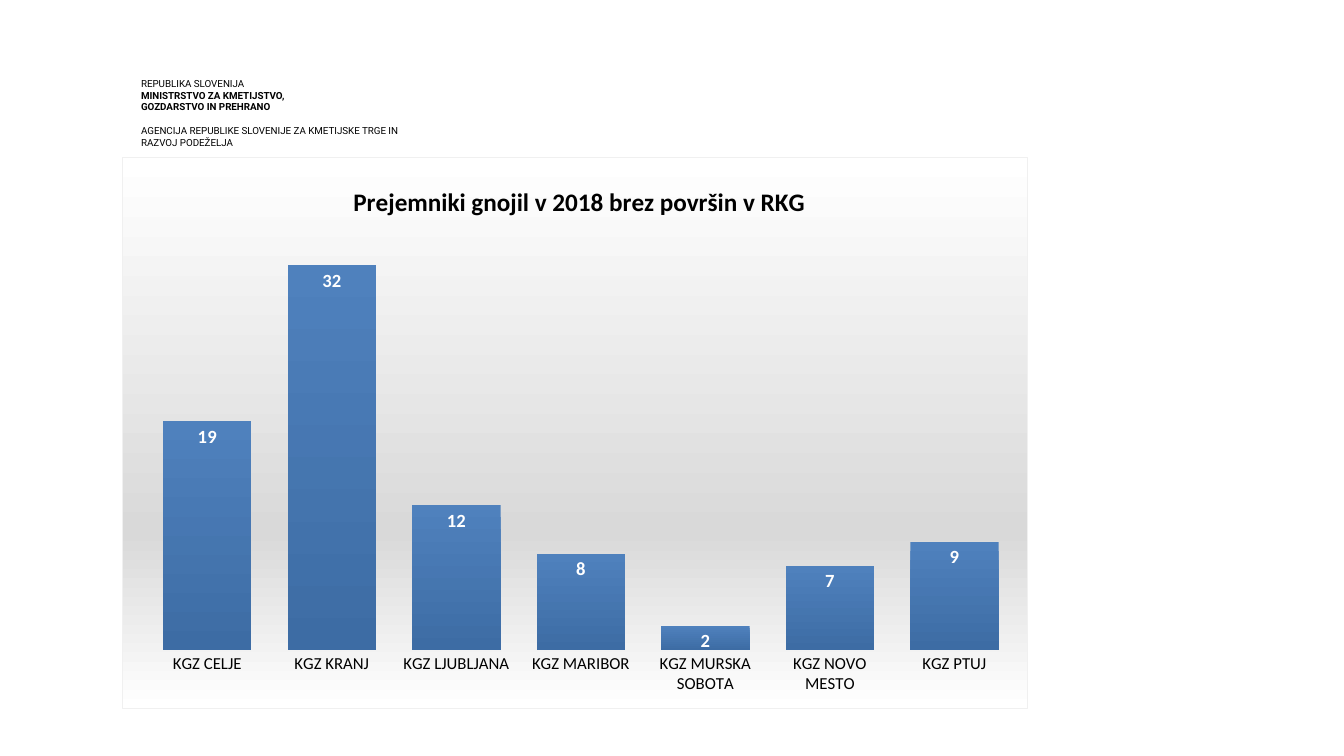
from dataclasses import dataclass

import pptx
import pptx.chart.data
import pptx.dml.color
import pptx.enum.chart
import pptx.oxml
import pptx.oxml.ns
import pptx.util

Pt = pptx.util.Pt
qn = pptx.oxml.ns.qn
NS = pptx.oxml.ns.nsdecls("c", "a")
COLORS = {
    "text": "000000",
    "muted": "999999",
    "white": "FFFFFF",
    "gray": "D9D9D9",
    "border": "F0F0F0",
    "bar_top": "4F81BD",
    "bar_bottom": "3D6CA4",
}


@dataclass
class HeaderLine:
    text: str
    bold: bool = False
    before: float = 0


@dataclass
class Stop:
    percent: int
    color: str


@dataclass
class Recipient:
    office: str
    count: int


HEADER = [
    HeaderLine("REPUBLIKA SLOVENIJA"),
    HeaderLine("MINISTRSTVO ZA KMETIJSTVO,", bold=True),
    HeaderLine("GOZDARSTVO IN PREHRANO", bold=True),
    HeaderLine(
        "AGENCIJA REPUBLIKE SLOVENIJE ZA KMETIJSKE TRGE IN RAZVOJ PODEŽELJA",
        before=8.4,
    ),
]
RECIPIENTS = [
    Recipient("KGZ CELJE", 19),
    Recipient("KGZ KRANJ", 32),
    Recipient("KGZ LJUBLJANA", 12),
    Recipient("KGZ MARIBOR", 8),
    Recipient("KGZ MURSKA SOBOTA", 2),
    Recipient("KGZ NOVO MESTO", 7),
    Recipient("KGZ PTUJ", 9),
]
BACKDROP = [Stop(0, "white"), Stop(68, "gray"), Stop(100, "white")]
BAR_FILL = [Stop(0, "bar_top"), Stop(100, "bar_bottom")]


def set_font(font, size: float, color: str = "text", bold: bool = False,
             name: str = "Calibri") -> None:
    font.size = Pt(size)
    font.bold = bold
    font.name = name
    font.color.rgb = pptx.dml.color.RGBColor.from_string(COLORS[color])


def add_text(p, text: str, **style) -> None:
    r = p.add_run()
    r.text = text
    set_font(r.font, **style)


def gradient(stops: list[Stop]):
    marks = "".join(
        f'<a:gs pos="{stop.percent * 1000}"><a:srgbClr val="{COLORS[stop.color]}"/></a:gs>'
        for stop in stops
    )
    return pptx.oxml.parse_xml(
        f'<a:gradFill {NS} rotWithShape="1"><a:gsLst>{marks}</a:gsLst>'
        '<a:lin ang="5400000" scaled="0"/></a:gradFill>'
    )


def set_layout(parent, index: int, target: str = "", **place: float) -> None:
    for old in parent.findall(qn("c:layout")):
        parent.remove(old)
    inner = f'<c:layoutTarget val="{target}"/>' if target else ""
    modes = "".join(f'<c:{key}Mode val="edge"/>' for key in "xy")
    values = "".join(f'<c:{key} val="{value}"/>' for key, value in place.items())
    parent.insert(index, pptx.oxml.parse_xml(
        f"<c:layout {NS}><c:manualLayout>{inner}{modes}{values}"
        "</c:manualLayout></c:layout>"
    ))


def add_header(s) -> None:
    tf = s.shapes.add_textbox(Pt(100.8), Pt(55.44), Pt(189.36), Pt(48.24)).text_frame
    tf.word_wrap = True
    tf.margin_left = tf.margin_top = tf.margin_right = tf.margin_bottom = 0
    for i, line in enumerate(HEADER):
        p = tf.add_paragraph() if i else tf.paragraphs[0]
        p.line_spacing = Pt(8.4)
        if line.before:
            p.space_before = Pt(line.before)
        add_text(p, line.text, size=7, bold=line.bold, name="Roboto")


def add_recipient_chart(s) -> None:
    enum = pptx.enum.chart
    data = pptx.chart.data.CategoryChartData()
    data.categories = [recipient.office for recipient in RECIPIENTS]
    data.add_series("Series 1", [recipient.count for recipient in RECIPIENTS])
    chart = s.shapes.add_chart(
        enum.XL_CHART_TYPE.COLUMN_CLUSTERED,
        Pt(87.12), Pt(112.32), Pt(647.28), Pt(393.84), data,
    ).chart
    set_font(chart.font, size=10, color="muted")
    chart.has_legend = False
    chart.has_title = True
    title = chart.chart_title
    add_text(title.text_frame.paragraphs[0],
             "Prejemniki gnojil v 2018 brez površin v RKG", size=18, bold=True)
    title.include_in_layout = False
    set_layout(title.element, 1, x=0.25, y=0.04)

    axis = chart.category_axis
    axis.major_tick_mark = enum.XL_TICK_MARK.NONE
    axis.format.line.fill.background()
    set_font(axis.tick_labels.font, size=12)
    scale = chart.value_axis
    scale.minimum_scale, scale.maximum_scale = 0, 35
    scale.has_major_gridlines = False
    scale.visible = False

    plot = chart.plots[0]
    plot.gap_width = 41
    plot.vary_by_categories = False
    bars = plot.series[0]
    bars.format.line.fill.background()
    bars.format.fill.background()
    bar_props = bars.format.fill._xPr
    bar_props.replace(bar_props.find(qn("a:noFill")), gradient(BAR_FILL))
    labels = bars.data_labels
    labels.show_value = True
    labels.position = enum.XL_LABEL_POSITION.INSIDE_END
    set_font(labels.font, size=13.3, color="white", bold=True)

    frame = chart.element.find(qn("c:chart"))
    set_layout(frame.find(qn("c:plotArea")), 0, "inner", x=0.025, y=0.13, w=0.963, h=0.764)
    props = pptx.oxml.parse_xml(
        f'<c:spPr {NS}><a:ln w="{Pt(0.75)}"><a:solidFill>'
        f'<a:srgbClr val="{COLORS["border"]}"/></a:solidFill></a:ln></c:spPr>'
    )
    props.insert(0, gradient(BACKDROP))
    frame.addnext(props)


def main() -> None:
    prs = pptx.Presentation()
    prs.slide_width, prs.slide_height = Pt(960), Pt(540)
    s = prs.slides.add_slide(prs.slide_layouts[6])
    add_header(s)
    add_recipient_chart(s)
    prs.save("out.pptx")


if __name__ == "__main__":
    main()
